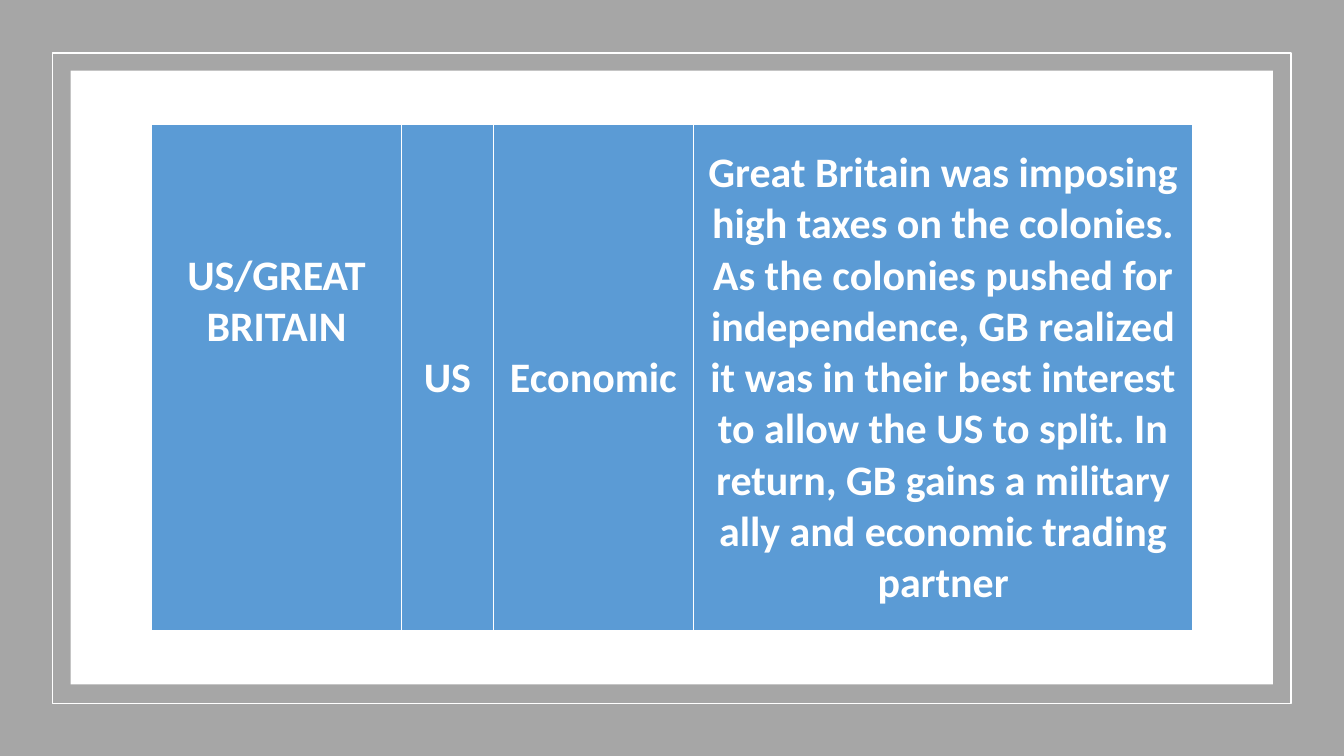
"""Builds a framed slide with a one-row table on the US and Great Britain."""
from lxml.etree import SubElement
from pptx import Presentation
from pptx.dml.color import RGBColor
from pptx.enum.shapes import MSO_SHAPE
from pptx.enum.text import MSO_ANCHOR, PP_ALIGN
from pptx.oxml.ns import qn
from pptx.util import Cm, Pt

COLORS = {"gray": "A6A6A6", "white": "FFFFFF", "blue": "5B9BD5"}
FRAMES = [
    (0, 0, 33.87, 19.05, "gray", None),
    (1.32, 1.34, 31.22, 16.39, None, "white"),
    (1.78, 1.78, 30.3, 15.47, "white", None),
]
COLUMNS = [
    (6.3, 3.87, "US/GREAT BRITAIN"),
    (2.31, 0, "US"),
    (5.05, 0, "Economic"),
    (12.58, 0, "Great Britain was imposing high taxes on the colonies. "
               "As the colonies pushed for independence, GB realized it was "
               "in their best interest to allow the US to split. In return, "
               "GB gains a military ally and economic trading partner"),
]
BORDERS = {"a:lnL": 1, "a:lnR": 1, "a:lnT": 1, "a:lnB": 3}


def rgb(name):
    return RGBColor.from_string(COLORS[name])


prs = Presentation()
prs.slide_width, prs.slide_height = Cm(33.87), Cm(19.05)
s = prs.slides.add_slide(prs.slide_layouts[6])

for left, top, width, height, fill, line in FRAMES:
    sp = s.shapes.add_shape(MSO_SHAPE.RECTANGLE, Cm(left), Cm(top), Cm(width), Cm(height))
    sp.shadow.inherit = False
    if fill:
        sp.fill.solid()
        sp.fill.fore_color.rgb = rgb(fill)
    else:
        sp.fill.background()
    if line:
        sp.line.color.rgb = rgb(line)
        sp.line.width = Pt(1)
    else:
        sp.line.fill.background()

table_width = sum(width for width, _, _ in COLUMNS)
table = s.shapes.add_table(1, len(COLUMNS), Cm(3.82), Cm(3.13), Cm(table_width), Cm(12.8)).table

for i, (width, bottom, text) in enumerate(COLUMNS):
    table.columns[i].width = Cm(width)
    cell = table.cell(0, i)
    cell.vertical_anchor = MSO_ANCHOR.MIDDLE
    cell.margin_left = cell.margin_right = Cm(0.19)
    cell.margin_top, cell.margin_bottom = Cm(0), Cm(bottom)
    for tag, points in BORDERS.items():
        ln = SubElement(cell._tc.get_or_add_tcPr(), qn(tag), w=str(Pt(points)))
        SubElement(SubElement(ln, qn("a:solidFill")), qn("a:srgbClr"), val=COLORS["white"])
    cell.fill.solid()
    cell.fill.fore_color.rgb = rgb("blue")
    p = cell.text_frame.paragraphs[0]
    p.alignment = PP_ALIGN.CENTER
    r = p.add_run()
    r.text = text
    r.font.name, r.font.size, r.font.bold = "Calibri", Pt(30), True
    r.font.color.rgb = rgb("white")

prs.save("out.pptx")
